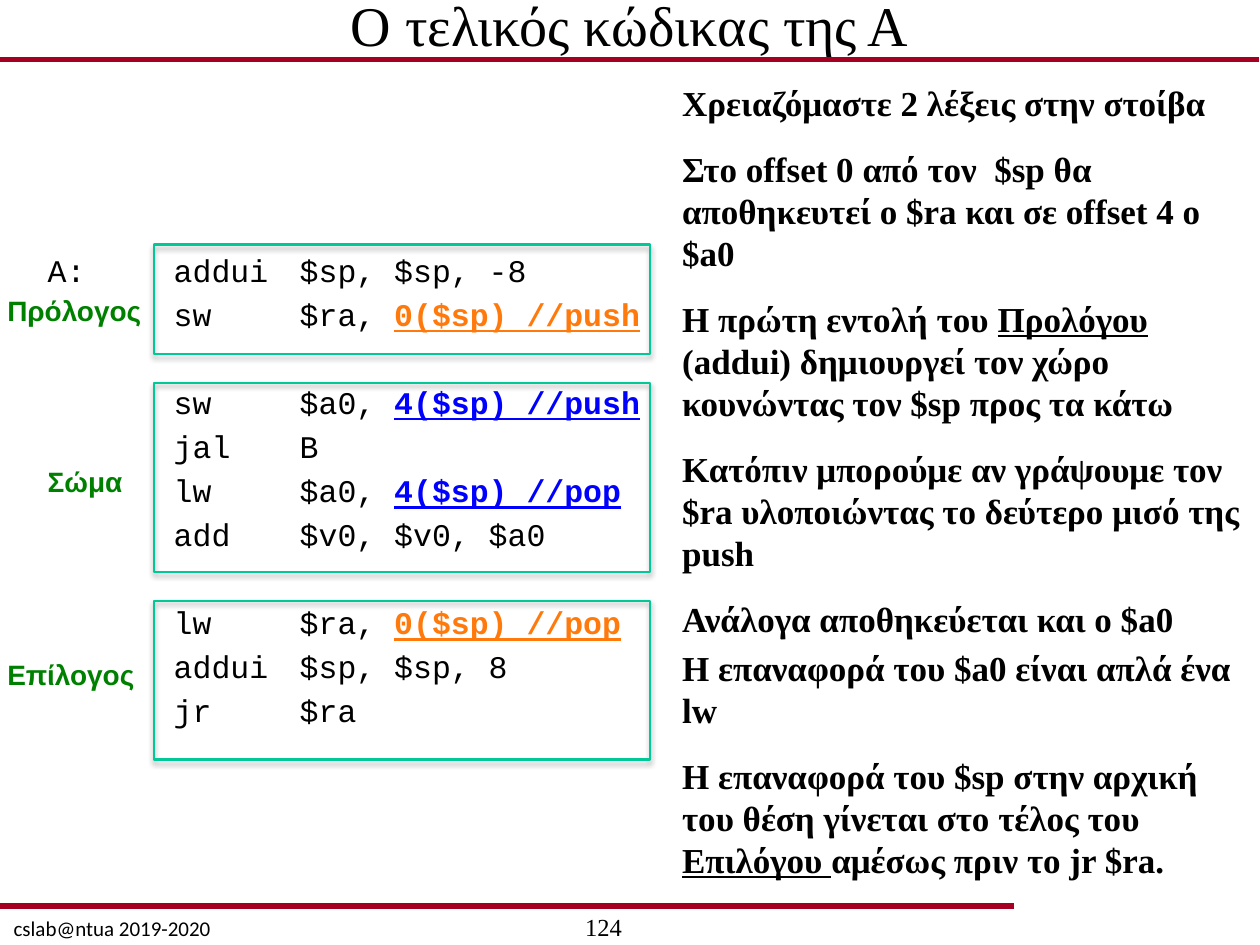
from lxml.etree import SubElement
from pptx import Presentation
from pptx.dml.color import RGBColor
from pptx.enum.shapes import MSO_CONNECTOR, MSO_SHAPE
from pptx.enum.text import MSO_ANCHOR, MSO_AUTO_SIZE, PP_ALIGN
from pptx.oxml.ns import qn
from pptx.util import Pt

BLACK, RED, TEAL, GREEN = "000000", "A50021", "00C896", "008000"
ORANGE, BLUE = "FF790B", "0000FF"
SERIF, MONO = "Times New Roman", "Courier New"

TITLE = "Ο τελικός κώδικας της Α"
CODE_GROUPS = [
    [("Α:\taddui\t$sp, $sp, -8",),
     ("\tsw\t$ra, ", "0($sp) //push", ORANGE)],
    [("\tsw\t$a0, ", "4($sp) //push", BLUE),
     ("\tjal\tΒ",),
     ("\tlw\t$a0, ", "4($sp) //pop", BLUE),
     ("\tadd\t$v0, $v0, $a0",)],
    [("\tlw\t$ra, ", "0($sp) //pop", ORANGE),
     ("\taddui\t$sp, $sp, 8",),
     ("\tjr\t$ra",)],
]
NOTE_GROUPS = [
    [("Χρειαζόμαστε 2 λέξεις στην στοίβα",)],
    [("Στο offset 0 από τον  $sp θα αποθηκευτεί ο $ra και σε offset 4 ο $a0",)],
    [("Η πρώτη εντολή του ", "Προλόγου ",
      "(addui) δημιουργεί τον χώρο κουνώντας τον $sp προς τα κάτω")],
    [("Κατόπιν μπορούμε αν γράψουμε τον $ra υλοποιώντας το δεύτερο μισό της push",)],
    [("Ανάλογα αποθηκεύεται και ο $a0",),
     ("Η επαναφορά του $a0 είναι απλά ένα lw",)],
    [("Η επαναφορά του $sp στην αρχική του θέση γίνεται στο τέλος του ", "Επιλόγου ",
      "αμέσως πριν το jr $ra.")],
]
FRAMES = [(139.7, 62.6), (218.9, 108), (343.4, 90.7)]
LABELS = [("Πρόλογος", -2.9, 164.2, 102.2),
          ("Σώμα", 20.2, 262.1, 62.6),
          ("Επίλογος", -2.9, 372.2, 90.7)]
FOOTERS = [("cslab@ntua 2019-2020", -1.4, 519.8, 131, 14.4, "Calibri", 12),
           ("124", 270, 517.7, 149.8, 18.7, SERIF, 14)]
RULES = [(33.8, 719.3), (517.7, 579.6)]


def color(value):
    return RGBColor.from_string(value)


def add_span(para, text, font=SERIF, size=20, fill=BLACK, bold=False, underline=False):
    span = para.add_run()
    span.text = text
    span.font.name = font
    span.font.size = Pt(size)
    span.font.color.rgb = color(fill)
    span.font.bold = bold
    span.font.underline = underline


def add_box(page, left, top, width, height):
    box = page.shapes.add_textbox(Pt(left), Pt(top), Pt(width), Pt(height))
    box.text_frame.word_wrap = True
    return box.text_frame


def add_tabs(para, *stops):
    tabs = SubElement(para._p.get_or_add_pPr(), qn("a:tabLst"))
    for stop in stops:
        SubElement(tabs, qn("a:tab"), pos=str(Pt(stop)), algn="l")


def grouped_paragraphs(frame, groups, line_gap, group_gap):
    for group_index, group in enumerate(groups):
        for line_index, parts in enumerate(group):
            first = group_index == line_index == 0
            para = frame.paragraphs[0] if first else frame.add_paragraph()
            para.space_before = Pt(0 if first else line_gap if line_index else group_gap)
            yield para, parts


def add_rule(page, top, right):
    rule = page.shapes.add_connector(MSO_CONNECTOR.STRAIGHT, Pt(0), Pt(top), Pt(right), Pt(top))
    rule.line.color.rgb = color(RED)
    rule.line.width = Pt(3)
    SubElement(rule._element.spPr, qn("a:effectLst"))


def add_frame(page, top, height):
    frame = page.shapes.add_shape(MSO_SHAPE.RECTANGLE, Pt(88), Pt(top), Pt(283.7), Pt(height))
    frame.fill.background()
    frame.line.color.rgb = color(TEAL)
    frame.line.width = Pt(1.25)
    frame.shadow.inherit = False
    effects = frame._element.spPr.find(qn("a:effectLst"))
    shadow = SubElement(effects, qn("a:outerShdw"), blurRad=str(Pt(3.1)), dist=str(Pt(1.8)),
                        dir="5400000", rotWithShape="0")
    tint = SubElement(shadow, qn("a:srgbClr"), val=BLACK)
    SubElement(tint, qn("a:alpha"), val="35000")


def main():
    deck = Presentation()
    deck.slide_width, deck.slide_height = Pt(720), Pt(540)
    page = deck.slides.add_slide(deck.slide_layouts[5])

    for top, right in RULES:
        add_rule(page, top, right)

    title = page.shapes.title
    title.left, title.top, title.width, title.height = Pt(54), Pt(-2.2), Pt(612), Pt(32.4)
    title.text_frame.auto_size = MSO_AUTO_SIZE.NONE
    title.text_frame.vertical_anchor = MSO_ANCHOR.MIDDLE
    title.text_frame.paragraphs[0].alignment = PP_ALIGN.CENTER
    add_span(title.text_frame.paragraphs[0], TITLE, size=32)

    code = add_box(page, 20.2, 139.7, 357.1, 244.1)
    for para, parts in grouped_paragraphs(code, CODE_GROUPS, 3.6, 28.7):
        add_tabs(para, 72, 144)
        add_span(para, parts[0], font=MONO, size=18)
        if len(parts) > 1:
            add_span(para, parts[1], font=MONO, size=18, fill=parts[2], bold=True, underline=True)

    notes = add_box(page, 382.7, 43.2, 334.8, 453.6)
    for para, parts in grouped_paragraphs(notes, NOTE_GROUPS, 4, 13.6):
        for index, text in enumerate(parts):
            add_span(para, text, bold=True, underline=index == 1)

    for top, height in FRAMES:
        add_frame(page, top, height)

    for text, left, top, width in LABELS:
        label = add_box(page, left, top, width, 26.6)
        add_span(label.paragraphs[0], text, font="Arial", size=16, fill=GREEN, bold=True)

    for text, left, top, width, height, font, size in FOOTERS:
        footer = add_box(page, left, top, width, height)
        footer.paragraphs[0].alignment = PP_ALIGN.CENTER
        add_span(footer.paragraphs[0], text, font=font, size=size)

    deck.save("out.pptx")


if __name__ == "__main__":
    main()
